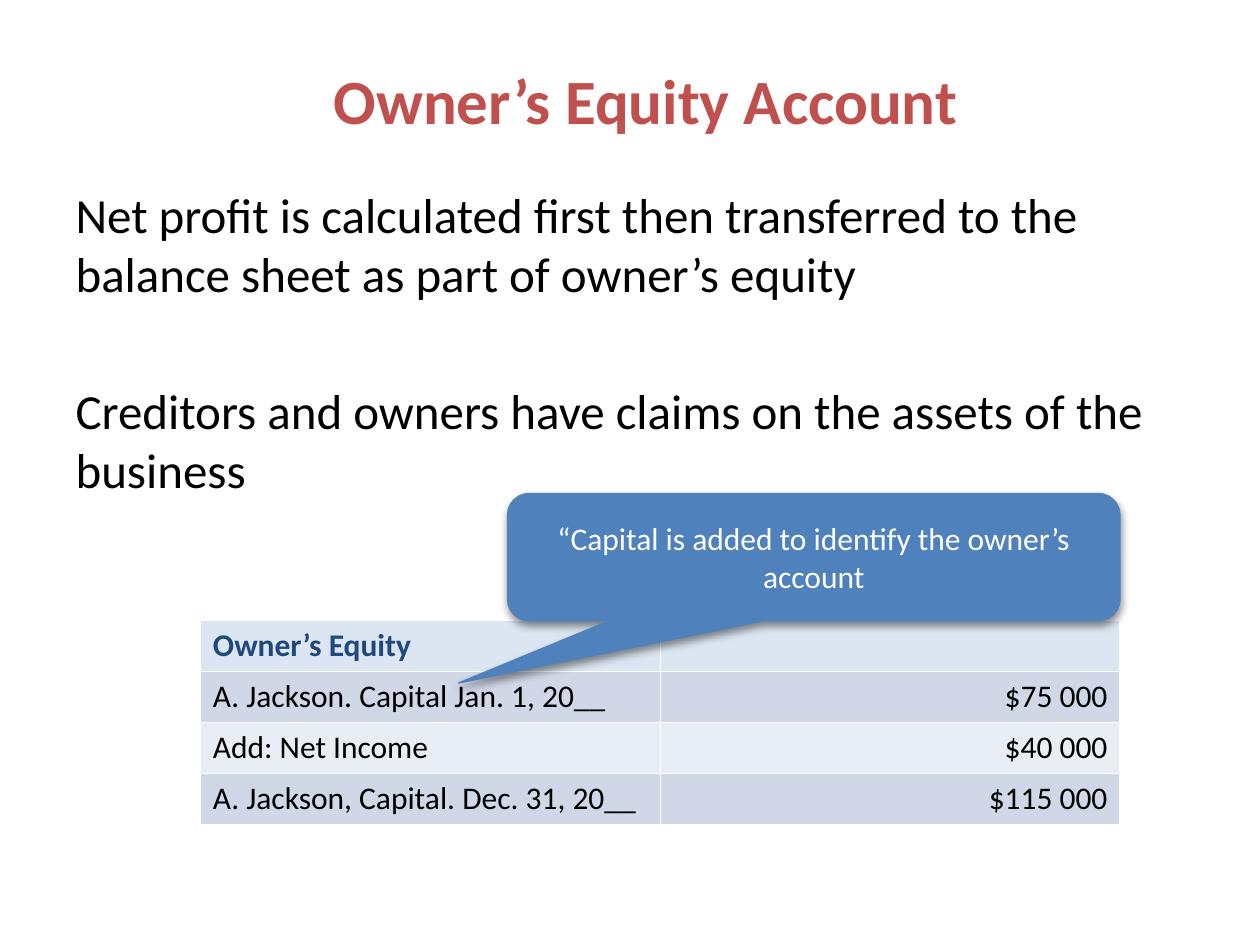
from lxml.etree import SubElement
from pptx import Presentation
from pptx.dml.color import RGBColor
from pptx.enum.shapes import MSO_SHAPE
from pptx.enum.text import MSO_ANCHOR, PP_ALIGN
from pptx.oxml.ns import qn
from pptx.util import Pt

FONT = "Calibri"
HUES = {
    "title": "C0504D", "text": "000000", "white": "FFFFFF",
    "head": "1F497D", "top": "DCE6F2", "odd": "D0D8E8",
    "even": "E9EDF4", "note": "4F81BD",
}
POINTS = [
    "Net profit is calculated first then transferred to the balance sheet "
    "as part of owner’s equity",
    "Creditors and owners have claims on the assets of the business",
]
ROWS = [
    ("Owner’s Equity", ""),
    ("A. Jackson. Capital Jan. 1, 20__", "$75 000"),
    ("Add: Net Income", "$40 000"),
    ("A. Jackson, Capital. Dec. 31, 20__", "$115 000"),
]


def hue(name):
    return RGBColor.from_string(HUES[name])


def place(shape, left, top, width, height):
    shape.left, shape.top = Pt(left), Pt(top)
    shape.width, shape.height = Pt(width), Pt(height)


def style(par, size, color, bold=False, align=PP_ALIGN.LEFT):
    par.alignment = align
    for run in par.runs:
        font = run.font
        font.name, font.size, font.bold = FONT, Pt(size), bold
        font.color.rgb = hue(color)


def add_title(slide):
    title = slide.shapes.title
    place(title, 48, 18, 642, 78)
    frame = title.text_frame
    frame.text = "Owner’s Equity Account"
    frame.vertical_anchor = MSO_ANCHOR.MIDDLE
    style(frame.paragraphs[0], 36, "title", True, PP_ALIGN.CENTER)


def add_body(slide):
    body = slide.placeholders[1]
    place(body, 36, 102, 642, 354)
    frame = body.text_frame
    frame.text = "\n".join(POINTS)
    for par in frame.paragraphs:
        style(par, 28, "text")
        props = par._p.get_or_add_pPr()
        props.set("marL", "0")
        props.set("indent", "0")
        SubElement(props, qn("a:buNone"))
    frame.paragraphs[1].space_before = Pt(44.5)


def add_ledger(slide):
    grid = slide.shapes.add_table(
        len(ROWS), 2, Pt(114.5), Pt(354.5), Pt(525.6), Pt(116.8)).table
    for i, row in enumerate(ROWS):
        fill = "top" if i == 0 else "odd" if i % 2 else "even"
        for j, text in enumerate(row):
            cell = grid.cell(i, j)
            cell.text = text
            cell.fill.solid()
            cell.fill.fore_color.rgb = hue(fill)
            style(cell.text_frame.paragraphs[0], 18,
                  "text" if i else "head", i == 0,
                  PP_ALIGN.RIGHT if j else PP_ALIGN.LEFT)


def add_shadow(shape):
    shape.shadow.inherit = False
    effects = shape._element.spPr.find(qn("a:effectLst"))
    shade = SubElement(effects, qn("a:outerShdw"), blurRad=str(Pt(5)),
                       dist=str(Pt(2.4)), dir="5400000", rotWithShape="0")
    black = SubElement(shade, qn("a:srgbClr"), val=HUES["text"])
    SubElement(black, qn("a:alpha"), val="45000")


def add_note(slide):
    note = slide.shapes.add_shape(
        MSO_SHAPE.ROUNDED_RECTANGULAR_CALLOUT,
        Pt(290), Pt(282), Pt(350), Pt(72.7))
    for i, value in enumerate((-0.58, 0.99, 0.17)):
        note.adjustments[i] = value
    note.fill.solid()
    note.fill.fore_color.rgb = hue("note")
    note.line.color.rgb = hue("note")
    note.line.width = Pt(0.79)
    add_shadow(note)
    frame = note.text_frame
    frame.word_wrap = True
    frame.vertical_anchor = MSO_ANCHOR.MIDDLE
    frame.text = "“Capital is added to identify the owner’s account"
    style(frame.paragraphs[0], 18, "white", align=PP_ALIGN.CENTER)


def main():
    deck = Presentation()
    deck.slide_width, deck.slide_height = Pt(720), Pt(540)
    slide = deck.slides.add_slide(deck.slide_layouts[1])
    add_title(slide)
    add_body(slide)
    add_ledger(slide)
    add_note(slide)
    deck.save("out.pptx")


if __name__ == "__main__":
    main()
